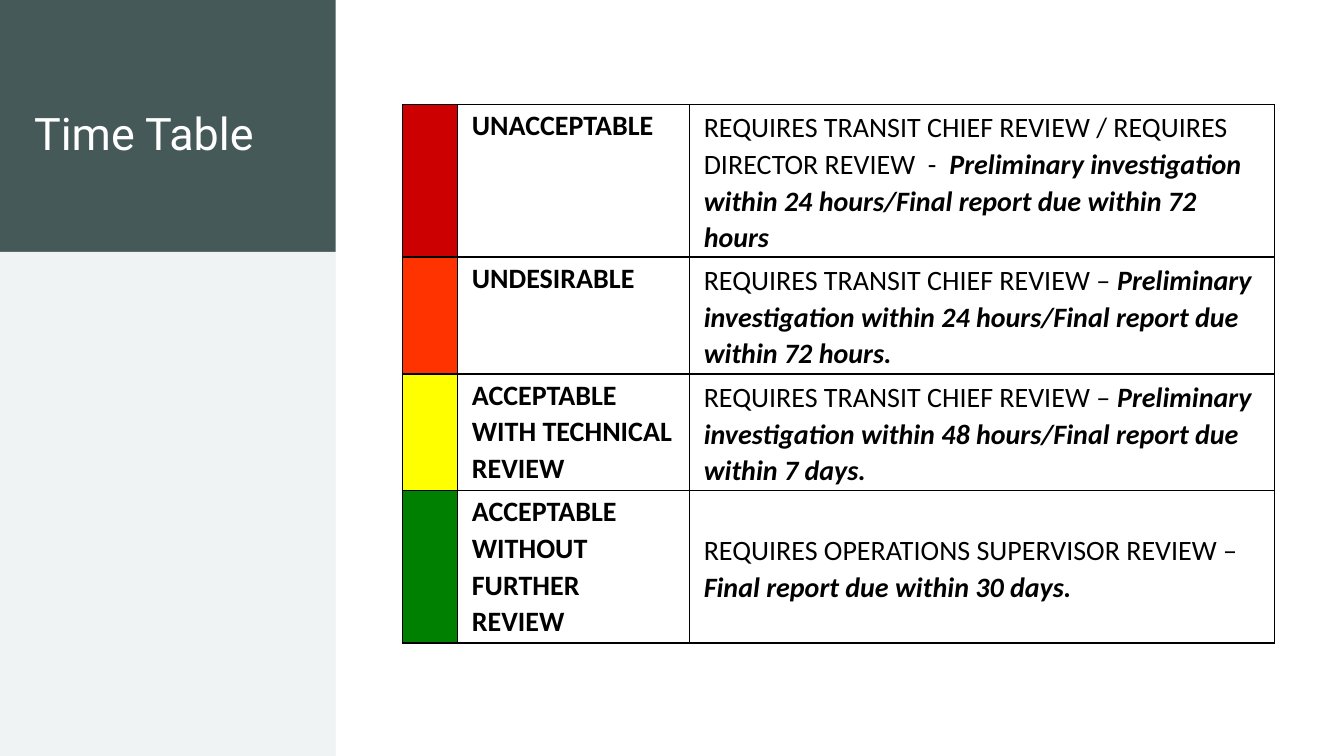
from dataclasses import dataclass

from lxml import etree
from pptx import Presentation
from pptx.dml.color import RGBColor
from pptx.enum.shapes import MSO_SHAPE
from pptx.enum.text import MSO_ANCHOR
from pptx.oxml.ns import qn
from pptx.util import Inches, Pt

RECT = MSO_SHAPE.RECTANGLE
TOP, MIDDLE = MSO_ANCHOR.TOP, MSO_ANCHOR.MIDDLE


@dataclass(frozen=True)
class Theme:
    header: str = "465959"
    panel: str = "ECF0F0"
    white: str = "FFFFFF"
    black: str = "000000"
    title_font: str = "Roboto"
    body_font: str = "Calibri"
    title_size: int = 32
    body_size: int = 20
    border_width: int = 1


@dataclass(frozen=True)
class Block:
    top: float
    height: float
    color: str
    alpha: int = 100


@dataclass(frozen=True)
class Rating:
    color: str
    level: str
    review: str
    deadline: str
    height: float


THEME = Theme()
SIDEBAR_WIDTH = 3.33
BLOCKS = [
    Block(0, 2.5, THEME.header),
    Block(2.5, 5, THEME.panel),
    Block(2.5, 5, THEME.white, 20),
]
COLUMN_WIDTHS = [0.55, 2.3, 5.8]
RATINGS = [
    Rating("CC0000", "UNACCEPTABLE",
           "REQUIRES TRANSIT CHIEF REVIEW / REQUIRES DIRECTOR REVIEW  -  ",
           "Preliminary investigation within 24 hours/Final report due within 72 hours", 1.51),
    Rating("FF3300", "UNDESIRABLE", "REQUIRES TRANSIT CHIEF REVIEW – ",
           "Preliminary investigation within 24 hours/Final report due within 72 hours.", 1.16),
    Rating("FFFF00", "ACCEPTABLE WITH TECHNICAL REVIEW", "REQUIRES TRANSIT CHIEF REVIEW – ",
           "Preliminary investigation within 48 hours/Final report due within 7 days.", 1.16),
    Rating("008000", "ACCEPTABLE WITHOUT FURTHER REVIEW",
           "REQUIRES OPERATIONS SUPERVISOR REVIEW – ",
           "Final report due within 30 days.", 1.51),
]
CELL_FORMAT = {
    "margin_left": Inches(0.14),
    "margin_right": Inches(0.14),
    "margin_top": Inches(0.02),
    "margin_bottom": Inches(0),
}
PARAGRAPH_FORMAT = {"line_spacing": 1.07, "space_after": Pt(8)}
TITLE_FORMAT = {"name": THEME.title_font, "size": Pt(THEME.title_size)}
BODY_FORMAT = {"name": THEME.body_font, "size": Pt(THEME.body_size)}
LEVEL_FORMAT = BODY_FORMAT | {"bold": True, "italic": False}
REVIEW_FORMAT = BODY_FORMAT | {"bold": False, "italic": False}
DEADLINE_FORMAT = BODY_FORMAT | {"bold": True, "italic": True}


def apply(target, values: dict) -> None:
    for name, value in values.items():
        setattr(target, name, value)


def add_run(p, text: str, values: dict, color: str) -> None:
    r = p.add_run()
    r.text = text
    apply(r.font, values)
    r.font.color.rgb = RGBColor.from_string(color)


def set_fill(fill, color: str) -> None:
    fill.solid()
    fill.fore_color.rgb = RGBColor.from_string(color)


def add_block(s, block: Block) -> None:
    sp = s.shapes.add_shape(RECT, Inches(0), Inches(block.top),
                            Inches(SIDEBAR_WIDTH), Inches(block.height))
    sp.shadow.inherit = False
    sp.line.fill.background()
    set_fill(sp.fill, block.color)
    if block.alpha < 100:
        color = sp.fill._xPr.find(qn("a:solidFill"))[0]
        etree.SubElement(color, qn("a:alpha"), val=str(block.alpha * 1000))


def add_title(s, text: str) -> None:
    sp = s.shapes.add_textbox(Inches(0.24), Inches(0.43), Inches(2.79), Inches(1.77))
    tf = sp.text_frame
    apply(tf, {"word_wrap": True, "vertical_anchor": MIDDLE})
    add_run(tf.paragraphs[0], text, TITLE_FORMAT, THEME.white)


def add_borders(cell) -> None:
    tc_pr = cell._tc.get_or_add_tcPr()
    for i, side in enumerate(("lnL", "lnR", "lnT", "lnB")):
        ln = etree.Element(qn(f"a:{side}"), w=str(Pt(THEME.border_width)))
        fill = etree.SubElement(ln, qn("a:solidFill"))
        etree.SubElement(fill, qn("a:srgbClr"), val=THEME.black)
        tc_pr.insert(i, ln)


def fill_text_cell(cell, runs: list[tuple[str, dict]], anchor) -> None:
    cell.fill.background()
    apply(cell, CELL_FORMAT | {"vertical_anchor": anchor})
    p = cell.text_frame.paragraphs[0]
    apply(p, PARAGRAPH_FORMAT)
    for text, values in runs:
        add_run(p, text, values, THEME.black)


def add_ratings(s, ratings: list[Rating]) -> None:
    height = sum(rating.height for rating in ratings)
    table = s.shapes.add_table(len(ratings), len(COLUMN_WIDTHS), Inches(3.99), Inches(1.04),
                               Inches(sum(COLUMN_WIDTHS)), Inches(height)).table
    apply(table, {"first_row": False, "horz_banding": False})
    for column, width in zip(table.columns, COLUMN_WIDTHS):
        column.width = Inches(width)
    for row, rating in zip(table.rows, ratings):
        row.height = Inches(rating.height)
        swatch, level, action = row.cells
        set_fill(swatch.fill, rating.color)
        fill_text_cell(level, [(rating.level, LEVEL_FORMAT)], TOP)
        fill_text_cell(action, [(rating.review, REVIEW_FORMAT),
                                (rating.deadline, DEADLINE_FORMAT)], MIDDLE)
        for cell in row.cells:
            add_borders(cell)


def main() -> None:
    prs = Presentation()
    apply(prs, {"slide_width": Inches(13.33), "slide_height": Inches(7.5)})
    s = prs.slides.add_slide(prs.slide_layouts[6])
    set_fill(s.background.fill, THEME.white)
    for block in BLOCKS:
        add_block(s, block)
    add_title(s, "Time Table")
    add_ratings(s, RATINGS)
    prs.save("out.pptx")


if __name__ == "__main__":
    main()
